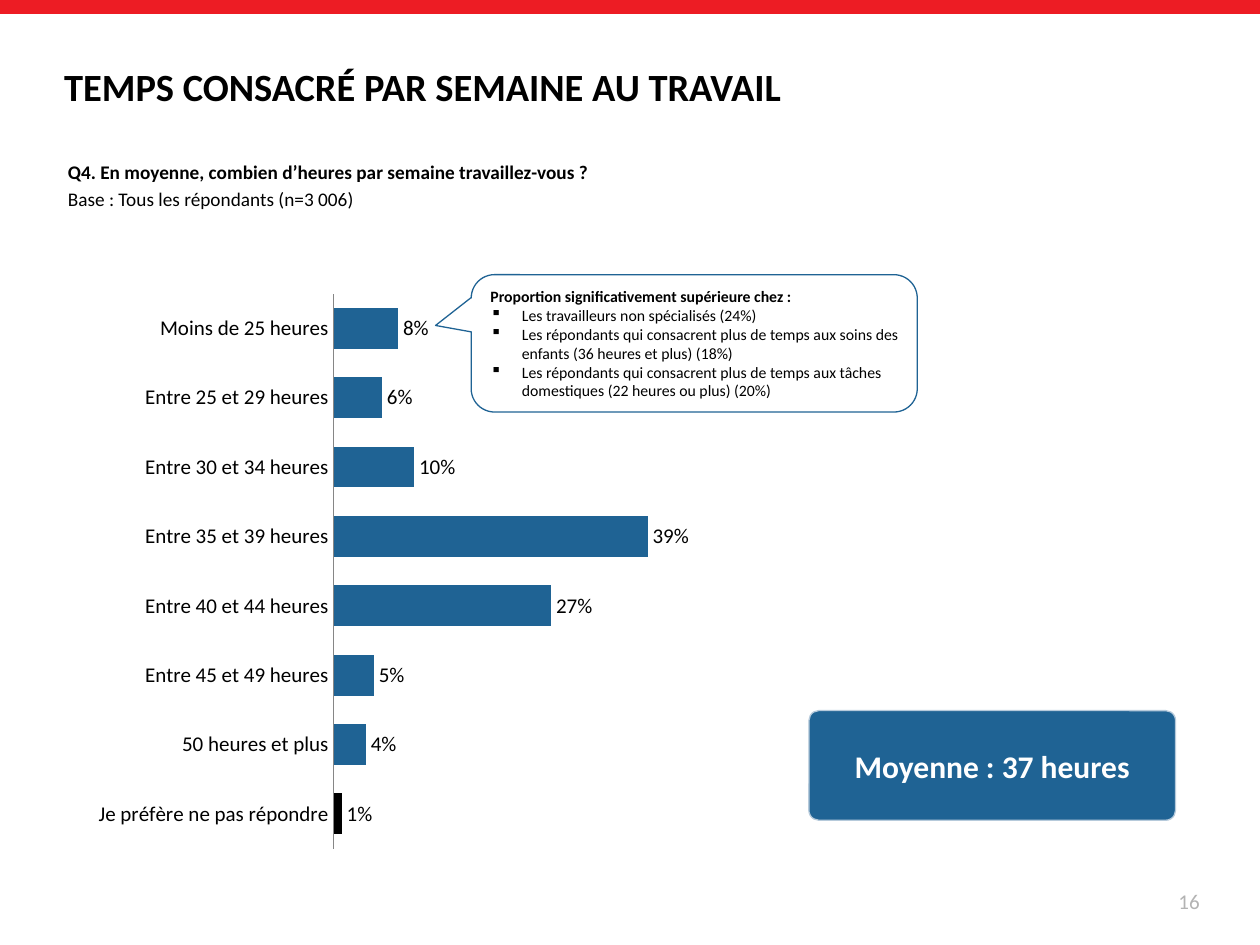
from dataclasses import dataclass

from pptx import Presentation
from pptx import util as u
from pptx.chart import data as chart_data
from pptx.dml import color
from pptx.enum import chart as charts, shapes, text
from pptx.oxml import parse_xml
from pptx.oxml import ns


@dataclass(frozen=True)
class Theme:
    font: str = "Calibri"
    red: str = "ED1C24"
    blue: str = "1F6394"
    pale_blue: str = "B6CADB"
    black: str = "000000"
    white: str = "FFFFFF"
    grey: str = "B3B3B3"
    axis: str = "868686"
    title: float = 22
    highlight: float = 18
    body: float = 12
    question: float = 11
    note: float = 9


THEME = Theme()
HOURS = {
    "Moins de 25 heures": 0.08,
    "Entre 25 et 29 heures": 0.06,
    "Entre 30 et 34 heures": 0.1,
    "Entre 35 et 39 heures": 0.39,
    "Entre 40 et 44 heures": 0.27,
    "Entre 45 et 49 heures": 0.05,
    "50 heures et plus": 0.04,
    "Je préfère ne pas répondre": 0.01,
}
GROUPS = [
    "Les travailleurs non spécialisés (24%)",
    "Les répondants qui consacrent plus de temps aux soins des enfants (36 heures et plus) (18%)",
    "Les répondants qui consacrent plus de temps aux tâches domestiques (22 heures ou plus) (20%)",
]


def rgb(value):
    return color.RGBColor.from_string(value)


def apply(target, values):
    for name, value in values.items():
        setattr(target, name, value)


def format_font(font, size, tint=THEME.black, bold=False):
    apply(font, {"name": THEME.font, "size": u.Pt(size), "bold": bold})
    font.color.rgb = rgb(tint)


def place(item, left, top, width, height):
    apply(item, {"left": u.Inches(left), "top": u.Inches(top),
                 "width": u.Inches(width), "height": u.Inches(height)})


def fill_solid(item, tint):
    item.fill.solid()
    item.fill.fore_color.rgb = rgb(tint)


def set_frame(item, anchor):
    frame = item.text_frame
    apply(frame, {"word_wrap": True, "auto_size": text.MSO_AUTO_SIZE.NONE,
                  "vertical_anchor": anchor})
    return frame


def add_bullet(para):
    properties = para._p.get_or_add_pPr()
    indent = u.Inches(0.25)
    properties.set("marL", str(indent))
    properties.set("indent", str(-indent))
    properties.append(parse_xml(f'<a:buChar {ns.nsdecls("a")} char="▪"/>'))


def write(item, lines, size, tint=THEME.black, align=text.PP_ALIGN.LEFT,
          anchor=text.MSO_ANCHOR.MIDDLE, gap=0, bullets=False):
    frame = set_frame(item, anchor)
    for index, line in enumerate(lines):
        para = frame.add_paragraph() if index else frame.paragraphs[0]
        para.alignment = align
        if index:
            para.space_before = u.Pt(gap)
            if bullets:
                add_bullet(para)
        span = para.add_run()
        span.text = line
        format_font(span.font, size, tint, bold=index == 0)


def add_box(page, kind, area, fill, line=None, adjustments=()):
    box = page.shapes.add_shape(kind, *map(u.Inches, area))
    box.shadow.inherit = False
    fill_solid(box, fill)
    if line:
        box.line.color.rgb = rgb(line)
        box.line.width = u.Pt(0.75)
    else:
        box.line.fill.background()
    for index, value in enumerate(adjustments):
        box.adjustments[index] = value
    return box


def add_text(page, area, lines, size, **options):
    box = page.shapes.add_textbox(*map(u.Inches, area))
    write(box, lines, size, **options)
    return box


def set_plot_area(chart, **fractions):
    values = "".join(f'<c:{name} val="{value}"/>' for name, value in fractions.items())
    layout = parse_xml(
        f'<c:layout {ns.nsdecls("c")}><c:manualLayout><c:layoutTarget val="inner"/>'
        f'<c:xMode val="edge"/><c:yMode val="edge"/>{values}</c:manualLayout></c:layout>')
    area = chart._chartSpace.chart.plotArea
    for old in area.findall(ns.qn("c:layout")):
        area.remove(old)
    area.insert(0, layout)


def add_hours_chart(page, area):
    data = chart_data.CategoryChartData(number_format="0%")
    data.categories = list(HOURS)
    data.add_series("Series 1", list(HOURS.values()))
    frame = page.shapes.add_chart(
        charts.XL_CHART_TYPE.BAR_CLUSTERED, *map(u.Inches, area), data)
    chart = frame.chart
    apply(chart, {"has_legend": False, "has_title": False})
    format_font(chart.font, THEME.body)
    set_plot_area(chart, x=0.24, y=0.06, w=0.76, h=0.94)

    apply(chart.category_axis, {"reverse_order": True, "has_major_gridlines": False,
                                "major_tick_mark": charts.XL_TICK_MARK.NONE})
    chart.category_axis.format.line.color.rgb = rgb(THEME.axis)
    apply(chart.value_axis, {"visible": False, "has_major_gridlines": False,
                             "minimum_scale": 0, "maximum_scale": 1})

    plot = chart.plots[0]
    apply(plot, {"gap_width": 70, "vary_by_categories": False, "has_data_labels": True})
    apply(plot.data_labels, {"show_value": True, "number_format": "0%",
                             "number_format_is_linked": False,
                             "position": charts.XL_LABEL_POSITION.OUTSIDE_END})
    format_font(plot.data_labels.font, THEME.body)
    series = plot.series[0]
    fill_solid(series.format, THEME.blue)
    fill_solid(series.points[len(HOURS) - 1].format, THEME.black)


def main():
    deck = Presentation()
    apply(deck, {"slide_width": u.Inches(10), "slide_height": u.Inches(7.5)})
    page = deck.slides.add_slide(deck.slide_layouts[5])

    add_box(page, shapes.MSO_SHAPE.RECTANGLE, (0, 0, 10, 0.11), THEME.red)
    title = page.shapes.title
    place(title, 0.41, 0.42, 7.66, 0.52)
    write(title, ["TEMPS CONSACRÉ PAR SEMAINE AU TRAVAIL"], THEME.title)
    add_text(page, (0.44, 1.22, 8.04, 1.18),
             ["Q4. En moyenne, combien d’heures par semaine travaillez-vous ?",
              "Base : Tous les répondants (n=3 006)"],
             THEME.question, align=text.PP_ALIGN.JUSTIFY,
             anchor=text.MSO_ANCHOR.TOP, gap=2.2)

    add_hours_chart(page, (0.63, 2.05, 8.41, 4.69))
    callout = add_box(page, shapes.MSO_SHAPE.ROUNDED_RECTANGULAR_CALLOUT,
                      (3.74, 2.18, 3.54, 1.09), THEME.white, THEME.blue,
                      (-0.58, -0.13, 0.17))
    write(callout, ["Proportion significativement supérieure chez :", *GROUPS],
          THEME.note, bullets=True)
    average = add_box(page, shapes.MSO_SHAPE.ROUNDED_RECTANGLE,
                      (6.42, 5.64, 2.91, 0.87), THEME.blue, THEME.pale_blue, (0.09,))
    write(average, ["Moyenne : 37 heures"], THEME.highlight, tint=THEME.white,
          align=text.PP_ALIGN.CENTER)

    number = add_text(page, (7.29, 6.95, 2.33, 0.4), ["16"], THEME.body,
                      tint=THEME.grey, align=text.PP_ALIGN.RIGHT)
    number.text_frame.paragraphs[0].runs[0].font.bold = False
    deck.save("out.pptx")


if __name__ == "__main__":
    main()
